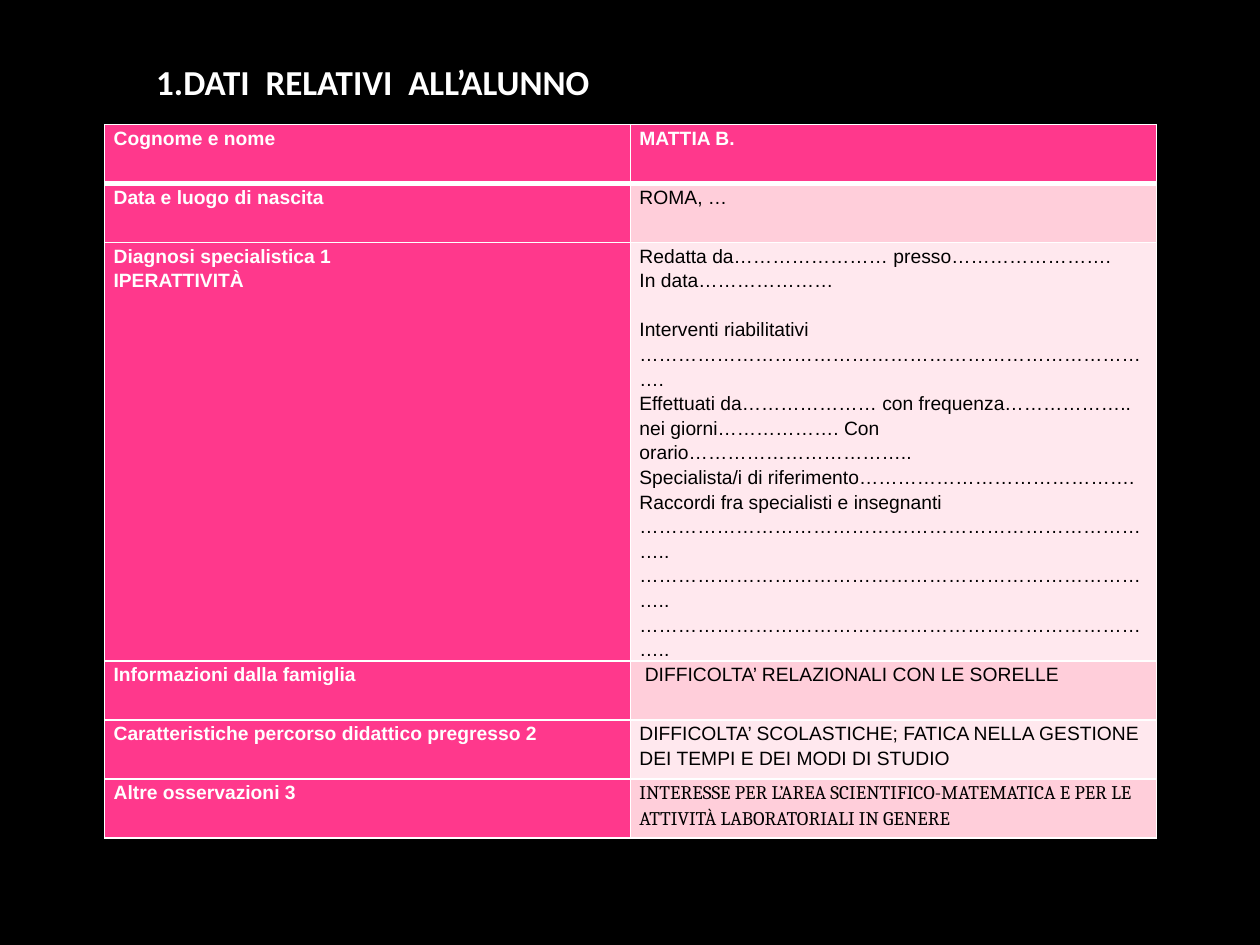
from lxml.etree import SubElement
from pptx import Presentation
from pptx.dml.color import RGBColor
from pptx.enum.text import MSO_ANCHOR as Anchor
from pptx.oxml.ns import qn
from pptx.util import Cm, Pt

COLORS = {
    "background": "000000",
    "label": "FF388C",
    "light": "FFE8EE",
    "medium": "FFCEDA",
    "white": "FFFFFF",
    "black": "000000",
}
TITLE = "1.DATI  RELATIVI  ALL’ALUNNO"
DOTTED_LINE = "…" * 27
LINE_GAP = 14  # one line of table text, in points

# (label lines, value lines)
STUDENT_DATA = [
    (["Cognome e nome"], ["MATTIA B."]),
    (["Data e luogo di nascita"], ["ROMA, …"]),
    (
        ["Diagnosi specialistica 1", "IPERATTIVITÀ"],
        [
            "Redatta da…………………… presso…………………….",
            "In data…………………",
            "Interventi riabilitativi",
            DOTTED_LINE + ".",
            "Effettuati da………………… con frequenza……………….. "
            "nei giorni………………. Con orario……………………………..",
            "Specialista/i di riferimento…………………………………….",
            "Raccordi fra specialisti e insegnanti",
        ] + [DOTTED_LINE + ".."] * 3,
    ),
    (["Informazioni dalla famiglia"], [" DIFFICOLTA’ RELAZIONALI CON LE SORELLE"]),
    (
        ["Caratteristiche percorso didattico pregresso 2"],
        ["DIFFICOLTA’ SCOLASTICHE; FATICA NELLA GESTIONE DEI TEMPI E DEI MODI DI STUDIO"],
    ),
    (
        ["Altre osservazioni 3"],
        ["INTERESSE PER L’AREA SCIENTIFICO-MATEMATICA E PER LE ATTIVITÀ LABORATORIALI IN GENERE"],
    ),
]
SPACED_LINES = {"Interventi riabilitativi"}
DIAGNOSIS_ROW = 2
LAST_ROW = len(STUDENT_DATA) - 1
COLUMN_WIDTH, ROW_HEIGHT, DIAGNOSIS_HEIGHT = 10.6, 1.19, 7.09


def rgb(name):
    return RGBColor.from_string(COLORS[name])


def add_run(paragraph, text, size, font, color, bold):
    run = paragraph.add_run()
    run.text = text
    run.font.size = Pt(size)
    run.font.name = font
    run.font.bold = bold
    run.font.color.rgb = rgb(color)


def set_borders(cell, widths):
    """Draw white borders; widths maps L, R, T, B to points."""
    properties = cell._tc.get_or_add_tcPr()
    for side, width in widths.items():
        line = SubElement(properties, qn(f"a:ln{side}"), w=str(Pt(width)))
        fill = SubElement(line, qn("a:solidFill"))
        SubElement(fill, qn("a:srgbClr"), val=COLORS["white"])


def fill_cell(cell, lines, fill, font, color, bold):
    cell.fill.solid()
    cell.fill.fore_color.rgb = rgb(fill)
    cell.margin_left = cell.margin_right = Cm(0.18)
    cell.margin_top = cell.margin_bottom = 0
    frame = cell.text_frame
    for index, text in enumerate(lines):
        paragraph = frame.add_paragraph() if index else frame.paragraphs[0]
        paragraph.line_spacing = 1.15
        if text in SPACED_LINES:
            paragraph.space_before = Pt(LINE_GAP)
        add_run(paragraph, text, 11, font, color, bold)


def add_student_table(slide):
    heights = [DIAGNOSIS_HEIGHT if row == DIAGNOSIS_ROW else ROW_HEIGHT
               for row in range(len(STUDENT_DATA))]
    table = slide.shapes.add_table(
        len(STUDENT_DATA), 2, Cm(2.11), Cm(2.51),
        Cm(2 * COLUMN_WIDTH), Cm(sum(heights))).table
    for column in table.columns:
        column.width = Cm(COLUMN_WIDTH)
    for row, (height, contents) in enumerate(zip(heights, STUDENT_DATA)):
        table.rows[row].height = Cm(height)
        widths = {"L": 1, "R": 1, "T": 3 if row == 1 else 1, "B": 3 if row == 0 else 1}
        for column, lines in enumerate(contents):
            cell = table.cell(row, column)
            set_borders(cell, widths)
            if row == 0 or column == 0:
                fill_cell(cell, lines, "label", "Arial", "white", True)
            else:
                fill = "medium" if row % 2 else "light"
                font = "Arial"
                if row == LAST_ROW:
                    font = "Cambria"
                fill_cell(cell, lines, fill, font, "black", False)


def add_title(slide):
    title = slide.shapes.add_textbox(Cm(2.9), Cm(1.09), Cm(9.8), Cm(1.88))
    frame = title.text_frame
    frame.word_wrap = True
    frame.vertical_anchor = Anchor.TOP
    add_run(frame.paragraphs[0], TITLE, 20, "Calibri", "white", True)


def main():
    presentation = Presentation()
    presentation.slide_width, presentation.slide_height = Cm(25.4), Cm(19.05)
    slide = presentation.slides.add_slide(presentation.slide_layouts[6])
    slide.background.fill.solid()
    slide.background.fill.fore_color.rgb = rgb("background")
    add_student_table(slide)
    add_title(slide)
    presentation.save("out.pptx")


if __name__ == "__main__":
    main()
